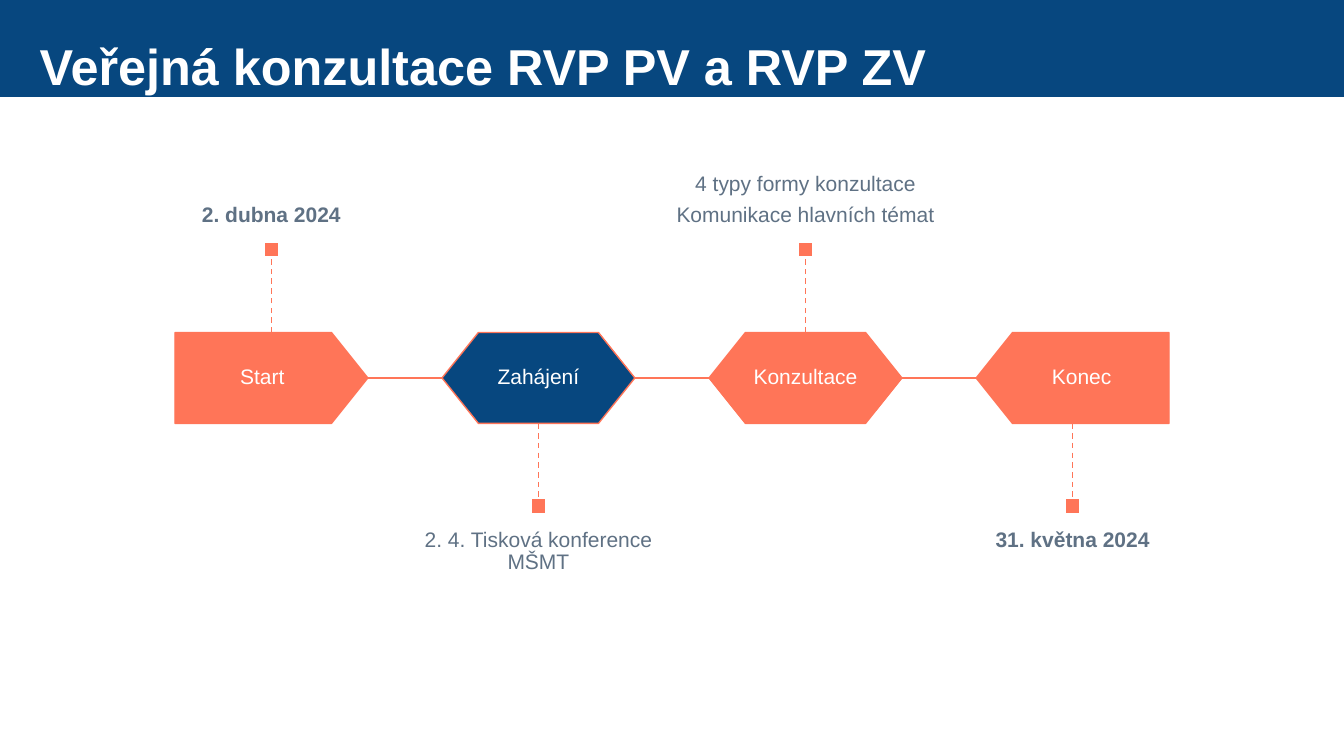
from dataclasses import dataclass

from lxml import etree
from pptx import Presentation
from pptx.dml.color import RGBColor
from pptx.enum.dml import MSO_LINE
from pptx.enum.shapes import MSO_CONNECTOR, MSO_SHAPE
from pptx.enum.text import MSO_ANCHOR, MSO_AUTO_SIZE, PP_ALIGN
from pptx.oxml.ns import qn
from pptx.util import Cm, Pt

PENTAGON, HEXAGON, RECTANGLE = MSO_SHAPE.PENTAGON, MSO_SHAPE.HEXAGON, MSO_SHAPE.RECTANGLE
STRAIGHT, DASH = MSO_CONNECTOR.STRAIGHT, MSO_LINE.DASH
TOP, MIDDLE, BOTTOM = MSO_ANCHOR.TOP, MSO_ANCHOR.MIDDLE, MSO_ANCHOR.BOTTOM
LEFT, CENTER = PP_ALIGN.LEFT, PP_ALIGN.CENTER

NAVY, CORAL, SLATE, WHITE = "07477F", "FF7558", "5F7184", "FFFFFF"
SLIDE_WIDTH, SLIDE_HEIGHT = 33.87, 19.05
AXIS = SLIDE_HEIGHT / 2
FIRST_CENTER, PITCH = 6.84, 6.73
STAGE_WIDTH, STAGE_HEIGHT = 4.86, 2.29
STEM, MARKER = 1.9, 0.38
NOTE_HEIGHT = 6.1
TIP = 0.46


@dataclass
class Stage:
    name: str
    notes: list[str]
    above: bool
    outline: int = HEXAGON
    fill: str = CORAL
    bold: bool = False
    rotation: int = 0
    name_inset_left: float = 0.71
    name_inset_right: float = 0.71


STAGES = [
    Stage("Start", ["2. dubna 2024"], True, PENTAGON, bold=True,
          name_inset_left=0, name_inset_right=TIP),
    Stage("Zahájení", ["2. 4. Tisková konference MŠMT"], False, fill=NAVY),
    Stage("Konzultace", ["4 typy formy konzultace", "Komunikace hlavních témat"], True),
    Stage("Konec", ["31. května 2024"], False, PENTAGON, bold=True, rotation=180,
          name_inset_left=TIP, name_inset_right=0),
]


def color(hex_code: str) -> RGBColor:
    return RGBColor.from_string(hex_code)


def write(holder, lines: list[str], *, size: float = 15, ink: str = WHITE,
          bold: bool = False, align=CENTER, anchor=MIDDLE, after: float = 6,
          inset_x: float = 0.3, inset_y: float = 0.3) -> None:
    frame = holder.text_frame
    frame.auto_size = MSO_AUTO_SIZE.NONE
    frame.word_wrap = True
    frame.vertical_anchor = anchor
    frame.margin_left = frame.margin_right = Cm(inset_x)
    frame.margin_top = frame.margin_bottom = Cm(inset_y)
    for index, line in enumerate(lines):
        paragraph = frame.add_paragraph() if index else frame.paragraphs[0]
        paragraph.alignment = align
        paragraph.line_spacing = 0.9
        paragraph.space_before = Pt(0)
        paragraph.space_after = Pt(after)
        run = paragraph.add_run()
        run.text = line
        run.font.name = "Arial"
        run.font.size = Pt(size)
        run.font.bold = bold
        run.font.color.rgb = color(ink)


def add_block(shapes, outline: int, left: float, top: float, width: float,
              height: float, fill: str, border: str):
    block = shapes.add_shape(outline, Cm(left), Cm(top), Cm(width), Cm(height))
    block.shadow.inherit = False
    block.fill.solid()
    block.fill.fore_color.rgb = color(fill)
    block.line.color.rgb = color(border)
    block.line.width = Pt(1)
    return block


def add_line(shapes, x1: float, y1: float, x2: float, y2: float, dash=None) -> None:
    link = shapes.add_connector(STRAIGHT, Cm(x1), Cm(y1), Cm(x2), Cm(y2))
    link.line.color.rgb = color(CORAL)
    link.line.width = Pt(1)
    if dash is not None:
        link.line.dash_style = dash
    etree.SubElement(link._element.spPr, qn("a:effectLst"))


def add_stage(shapes, stage: Stage, center: float) -> None:
    left = center - STAGE_WIDTH / 2
    top = AXIS - STAGE_HEIGHT / 2
    body = add_block(shapes, stage.outline, left, top, STAGE_WIDTH, STAGE_HEIGHT,
                     stage.fill, CORAL)
    body.adjustments[0] = 0.4
    body.rotation = stage.rotation

    name_width = STAGE_WIDTH - stage.name_inset_left - stage.name_inset_right
    name = shapes.add_textbox(Cm(left + stage.name_inset_left), Cm(top),
                              Cm(name_width), Cm(STAGE_HEIGHT))
    write(name, [stage.name])

    side = -1 if stage.above else 1
    stem_start = AXIS + side * STAGE_HEIGHT / 2
    stem_end = stem_start + side * STEM
    add_line(shapes, center, stem_start, center, stem_end, DASH)
    marker_top = stem_end - MARKER if stage.above else stem_end
    add_block(shapes, RECTANGLE, center - MARKER / 2, marker_top, MARKER, MARKER,
              CORAL, WHITE)

    note_top = marker_top - NOTE_HEIGHT if stage.above else marker_top + MARKER
    note = shapes.add_textbox(Cm(center - PITCH / 2), Cm(note_top),
                              Cm(PITCH), Cm(NOTE_HEIGHT))
    write(note, stage.notes, ink=SLATE, bold=stage.bold,
          anchor=BOTTOM if stage.above else TOP, inset_x=0, inset_y=0.38)


def main() -> None:
    deck = Presentation()
    deck.slide_width, deck.slide_height = Cm(SLIDE_WIDTH), Cm(SLIDE_HEIGHT)
    slide = deck.slides.add_slide(deck.slide_layouts[5])

    title = slide.shapes.title
    title.left, title.top = Cm(0), Cm(0)
    title.width, title.height = Cm(SLIDE_WIDTH), Cm(2.44)
    title.fill.solid()
    title.fill.fore_color.rgb = color(NAVY)
    write(title, ["Veřejná konzultace RVP PV a RVP ZV"], size=36, bold=True,
          align=LEFT, anchor=BOTTOM, after=0, inset_x=1, inset_y=0)

    timeline = slide.shapes.add_group_shape().shapes
    for index, stage in enumerate(STAGES):
        center = FIRST_CENTER + index * PITCH
        add_stage(timeline, stage, center)
        if index:
            add_line(timeline, center - PITCH + STAGE_WIDTH / 2, AXIS,
                     center - STAGE_WIDTH / 2, AXIS)

    deck.save("out.pptx")


if __name__ == "__main__":
    main()
